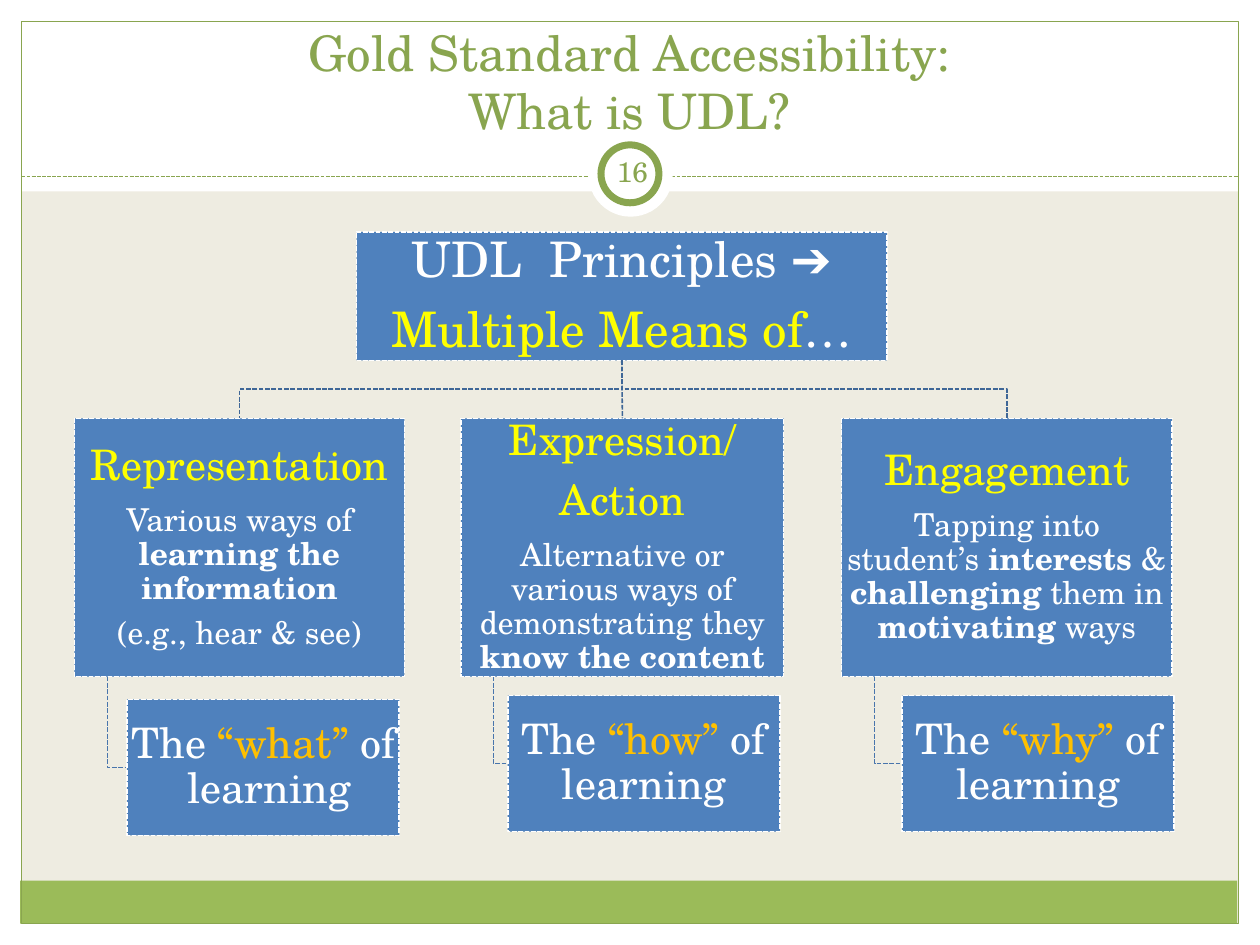
from lxml.etree import SubElement
from pptx import Presentation
from pptx.dml.color import RGBColor
from pptx.enum.dml import MSO_LINE
from pptx.enum.shapes import MSO_CONNECTOR, MSO_SHAPE
from pptx.enum.text import MSO_ANCHOR, PP_ALIGN
from pptx.oxml.ns import qn
from pptx.util import Inches, Pt

FONT = "TeX Gyre Schola"
WHITE, YELLOW, ORANGE = "FFFFFF", "FFFF00", "FFC000"
GREEN, BLUE, TRUNK, BRANCH = "89A54F", "4F81BD", "3F6797", "4875AC"

TITLE = ["Gold Standard Accessibility:", "What is UDL?"]
NUMBER = "16"
BANDS = [
    (0, 7.33, 10, 0.17, WHITE),
    (0, 0, 10, 1.52, WHITE),
    (0, 0, 0.17, 7.5, WHITE),
    (9.83, 0, 0.17, 7.5, WHITE),
    (0.16, 6.99, 9.66, 0.34, "9BBB59"),
]
ROOT = (2.83, 1.84, 4.21, 1.02)
ROOT_TEXT = [
    (28, [("UDL  Principles ➔", WHITE, False)]),
    (28, [("Multiple Means of", YELLOW, False), ("…", WHITE, False)]),
]
PRINCIPLES = [
    {
        "box": (0.59, 3.32, 2.62, 2.05),
        "heads": ["Representation"],
        "body": [
            [("Various ways of ", False), ("learning the information", True)],
            [("(e.g., hear & see)", False)],
        ],
        "question": (1.01, 5.55, 2.16, 1.08),
        "words": ("“what” ", "of  learning"),
    },
    {
        "box": (3.66, 3.32, 2.56, 2.05),
        "heads": ["Expression/", "Action"],
        "body": [
            [("Alternative or various ways of demonstrating they ", False),
             ("know the content", True)],
        ],
        "question": (4.03, 5.52, 2.16, 1.08),
        "words": ("“how” ", "of learning"),
    },
    {
        "box": (6.68, 3.32, 2.62, 2.05),
        "heads": ["Engagement"],
        "body": [
            [("Tapping into student’s ", False), ("interests", True), (" & ", False),
             ("challenging", True), (" them in ", False), ("motivating", True),
             (" ways", False)],
        ],
        "question": (7.16, 5.52, 2.16, 1.08),
        "words": ("“why” ", "of learning"),
    },
]


def rgb(value):
    return RGBColor.from_string(value)


def set_line(line, color, width, dashed=False):
    line.color.rgb = rgb(color)
    line.width = Pt(width)
    if dashed:
        line.dash_style = MSO_LINE.SQUARE_DOT


def add_shape(s, box, fill=None, kind=MSO_SHAPE.RECTANGLE):
    sp = s.shapes.add_shape(kind, *map(Inches, box))
    sp.shadow.inherit = False
    if fill:
        sp.fill.solid()
        sp.fill.fore_color.rgb = rgb(fill)
    else:
        sp.fill.background()
    sp.line.fill.background()
    return sp


def add_run(p, text, size, color, bold=False):
    r = p.add_run()
    r.text = text
    r.font.name = FONT
    r.font.size = Pt(size)
    r.font.bold = bold
    r.font.color.rgb = rgb(color)


def set_frame(tf, inset):
    tf.word_wrap = True
    tf.vertical_anchor = MSO_ANCHOR.MIDDLE
    tf.margin_left = tf.margin_right = tf.margin_top = tf.margin_bottom = Inches(inset)


def add_box(s, box, paragraphs):
    sp = add_shape(s, box, BLUE)
    set_line(sp.line, WHITE, 0.9, True)
    tf = sp.text_frame
    set_frame(tf, 0.02)
    for i, (size, runs) in enumerate(paragraphs):
        p = tf.add_paragraph() if i else tf.paragraphs[0]
        p.alignment = PP_ALIGN.CENTER
        p.line_spacing = 0.9
        p.space_after = Pt(round(0.35 * size, 1))
        for text, color, bold in runs:
            add_run(p, text, size, color, bold)
    return sp


def add_straight(s, start, end, color, width):
    c = s.shapes.add_connector(MSO_CONNECTOR.STRAIGHT, *map(Inches, start + end))
    SubElement(c._element.spPr, qn("a:effectLst"))
    set_line(c.line, color, width, True)
    return c


def add_path(s, points, color):
    pts = [(Inches(x), Inches(y)) for x, y in points]
    builder = s.shapes.build_freeform(*pts[0])
    builder.add_line_segments(pts[1:], close=False)
    sp = builder.convert_to_shape()
    sp.shadow.inherit = False
    sp.fill.background()
    set_line(sp.line, color, 0.9, True)


def add_frame(s):
    for *box, fill in BANDS:
        add_shape(s, box, fill)
    set_line(add_shape(s, (0.17, 0.17, 9.66, 7.16)).line, GREEN, 0.75)
    add_straight(s, (0.17, 1.4), (9.83, 1.4), GREEN, 0.75)
    add_shape(s, (4.67, 1.05, 0.67, 0.67), WHITE, MSO_SHAPE.OVAL)
    ring = add_shape(s, (4.77, 1.15, 0.46, 0.46), WHITE, MSO_SHAPE.OVAL)
    set_line(ring.line, GREEN, 4)


def add_heading(s):
    title = s.shapes.title
    title.left, title.top, title.width, title.height = map(Inches, (0.33, 0.33, 9.33, 0.83))
    s.shapes._spTree.append(title._element)
    tf = title.text_frame
    tf.word_wrap = True
    tf.vertical_anchor = MSO_ANCHOR.BOTTOM
    p = tf.paragraphs[0]
    p.alignment = PP_ALIGN.CENTER
    for i, text in enumerate(TITLE):
        if i:
            p.add_line_break()
        add_run(p, text, 28, GREEN)
    number = s.shapes.add_textbox(*map(Inches, (4.77, 1.12, 0.5, 0.48)))
    set_frame(number.text_frame, 0.05)
    p = number.text_frame.paragraphs[0]
    p.alignment = PP_ALIGN.CENTER
    add_run(p, NUMBER, 16, GREEN)


def add_tree(s):
    x, y, w, h = ROOT
    root_x, root_y = x + w / 2, y + h
    root = add_box(s, ROOT, ROOT_TEXT)
    for item in PRINCIPLES:
        x, y, w, h = item["box"]
        qx, qy, _, qh = item["question"]
        mid_x, mid_y = x + w / 2, (root_y + y) / 2
        stem_x = x + w / 10
        add_path(s, [(stem_x, y + h), (stem_x, qy + qh / 2), (qx, qy + qh / 2)], BRANCH)
        texts = [(24, [(head, YELLOW, False)]) for head in item["heads"]]
        texts += [(18, [(t, WHITE, b) for t, b in runs]) for runs in item["body"]]
        child = add_box(s, item["box"], texts)
        word, rest = item["words"]
        add_box(s, item["question"],
                [(24, [("The ", WHITE, False), (word, ORANGE, False), (rest, WHITE, False)])])
        if abs(mid_x - root_x) < 0.05:
            c = add_straight(s, (root_x, root_y), (mid_x, y), TRUNK, 0.9)
            c.begin_connect(root, 2)
            c.end_connect(child, 0)
        else:
            add_path(s, [(root_x, root_y), (root_x, mid_y), (mid_x, mid_y), (mid_x, y)], TRUNK)


def main():
    """Build the slide on the three UDL principles."""
    prs = Presentation()
    prs.slide_width, prs.slide_height = Inches(10), Inches(7.5)
    s = prs.slides.add_slide(prs.slide_layouts[5])
    s.background.fill.solid()
    s.background.fill.fore_color.rgb = rgb("EEECE1")
    add_frame(s)
    add_heading(s)
    add_tree(s)
    prs.save("out.pptx")


if __name__ == "__main__":
    main()
